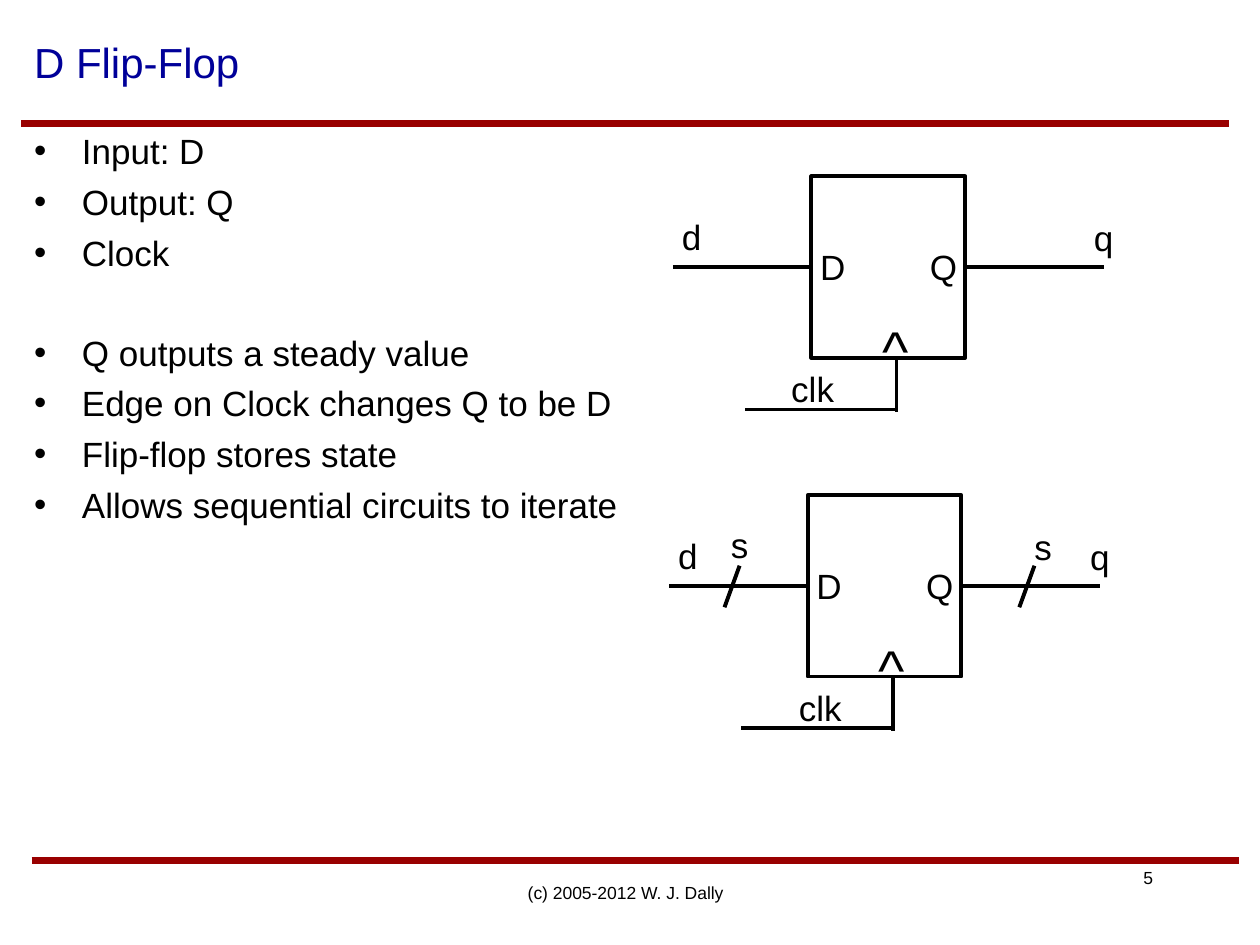
from lxml import etree
from pptx import Presentation
from pptx.dml.color import RGBColor
from pptx.enum.shapes import MSO_CONNECTOR, MSO_SHAPE
from pptx.enum.text import MSO_ANCHOR, PP_ALIGN
from pptx.oxml.ns import qn
from pptx.util import Inches, Pt

LINE, RECT = MSO_CONNECTOR.STRAIGHT, MSO_SHAPE.RECTANGLE
TOP, MID = MSO_ANCHOR.TOP, MSO_ANCHOR.MIDDLE
LEFT, MIDDLE, RIGHT = PP_ALIGN.LEFT, PP_ALIGN.CENTER, PP_ALIGN.RIGHT
COLS, ROWS = 100, 75
INK = {"rule": "990000", "title": "000099", "text": "000000"}
POINTS = ["Input: D", "Output: Q", "Clock", "Q outputs a steady value",
          "Edge on Clock changes Q to be D", "Flip-flop stores state",
          "Allows sequential circuits to iterate"]


class Deck:
    """Draws styled parts on one slide, placed by grid columns and rows."""

    def __init__(self):
        """Open a deck with one title and content slide."""
        self.deck = Presentation()
        self.deck.slide_width, self.deck.slide_height = Inches(10), Inches(7.5)
        self.font = "Arial"
        self.slide = self.deck.slides.add_slide(self.deck.slide_layouts[1])
        self.layer = self.slide.shapes

    def spot(self, *cells):
        """Turn column and row pairs into lengths."""
        units = self.deck.slide_width / COLS, self.deck.slide_height / ROWS
        return [round(cell * units[i % 2]) for i, cell in enumerate(cells)]

    def style(self, para, size, ink="text", align=LEFT):
        """Set the font and alignment of a paragraph."""
        para.alignment = align
        para.font.name, para.font.size = self.font, Pt(size)
        para.font.color.rgb = RGBColor.from_string(INK[ink])

    def move(self, shape, cells):
        """Place a shape on the grid."""
        shape.left, shape.top, shape.width, shape.height = self.spot(*cells)

    def title(self, text, cells):
        """Fill the title placeholder."""
        shape = self.slide.shapes.title
        self.move(shape, cells)
        shape.text_frame.text = text
        shape.text_frame.vertical_anchor = MID
        self.style(shape.text_frame.paragraphs[0], 24, "title")

    def list(self, items, cells, split):
        """Fill the body placeholder, with a gap before the split item."""
        shape = self.slide.placeholders[1]
        self.move(shape, cells)
        shape.text_frame.text = "\n".join(items)
        for i, para in enumerate(shape.text_frame.paragraphs):
            self.style(para, 20)
            para.space_before = Pt(33 if i == split else 5)
            props = para._p.get_or_add_pPr()
            props.set("marL", str(Inches(0.38)))
            props.set("indent", str(-Inches(0.38)))

    def text(self, words, cells, size=20, align=MIDDLE, anchor=MID, pad=0):
        """Add a one-line text box."""
        box = self.layer.add_textbox(*self.spot(*cells))
        frame = box.text_frame
        frame.text, frame.word_wrap, frame.vertical_anchor = words, False, anchor
        frame.margin_left = frame.margin_right = Inches(2 * pad)
        frame.margin_top = frame.margin_bottom = Inches(pad)
        self.style(frame.paragraphs[0], size, align=align)

    def line(self, cells, ink="text", width=2.25):
        """Add a straight line without a shadow."""
        line = self.layer.add_connector(LINE, *self.spot(*cells))
        line.line.color.rgb = RGBColor.from_string(INK[ink])
        line.line.width = Pt(width)
        etree.SubElement(line._element.spPr, qn("a:effectLst"))
        return line

    def box(self, cells):
        """Add an outlined box."""
        box = self.layer.add_shape(RECT, *self.spot(*cells))
        box.shadow.inherit = False
        box.fill.background()
        box.line.color.rgb = RGBColor.from_string(INK["text"])
        box.line.width = Pt(2.25)
        return box

    def flop(self, x, y, clock, bus=False):
        """Draw a grouped flip-flop, with bus marks if asked."""
        self.layer = self.slide.shapes.add_group_shape().shapes
        box = self.box((x, y, 12.2, 14.4))
        mid = y + 7.2
        self.line((x - 11, mid, x, mid)).end_connect(box, 1)
        self.line((x + 12.2, mid, x + 23.2, mid)).begin_connect(box, 3)
        self.line((x + 6.75, y + 14.4, x + 6.75, y + 18.7))
        self.line((x + 6.6, y + 18.5, x - 5.3, y + 18.5))
        labels = [("D", 1.7, 5.5), ("Q", 10.4, 5.5), ("d", -9.5, 3.1),
                  ("q", 23.2, 3.2), ("clk", clock, 15.2)]
        if bus:
            labels += [("s", -5.4, 2.3), ("s", 18.7, 2.4)]
            for side in (-6.6, 16.8):
                self.line((x + side + 1.2, y + 5.6, x + side, y + 8.9))
        for name, col, row in labels:
            wide = 2 * len(name)
            self.text(name, (x + col - wide / 2, y + row, wide, 3.3))
        self.text("^", (x + 5.6, y + 11.1, 2.1, 5.3), 32)
        self.layer = self.slide.shapes


def main():
    """Build the flip-flop slide."""
    deck = Deck()
    deck.line((1.7, 9.8, 97.5, 9.8), "rule", 4)
    deck.line((2.5, 68.3, 98.3, 68.3), "rule", 4)
    deck.text("5", (75, 68.3, 17.5, 2.7), 10, RIGHT, TOP, 0.05)
    deck.text("(c) 2005-2012 W. J. Dally", (33.8, 68.3, 31.7, 5), 10, pad=0.05)
    deck.title("D Flip-Flop", (1.7, 0, 98.3, 9.8))
    deck.list(POINTS, (1.7, 9.8, 95.8, 58.5), 3)
    deck.flop(64.4, 14, 0.1)
    deck.flop(64.1, 39.3, 1, bus=True)
    deck.deck.save("out.pptx")


if __name__ == "__main__":
    main()
